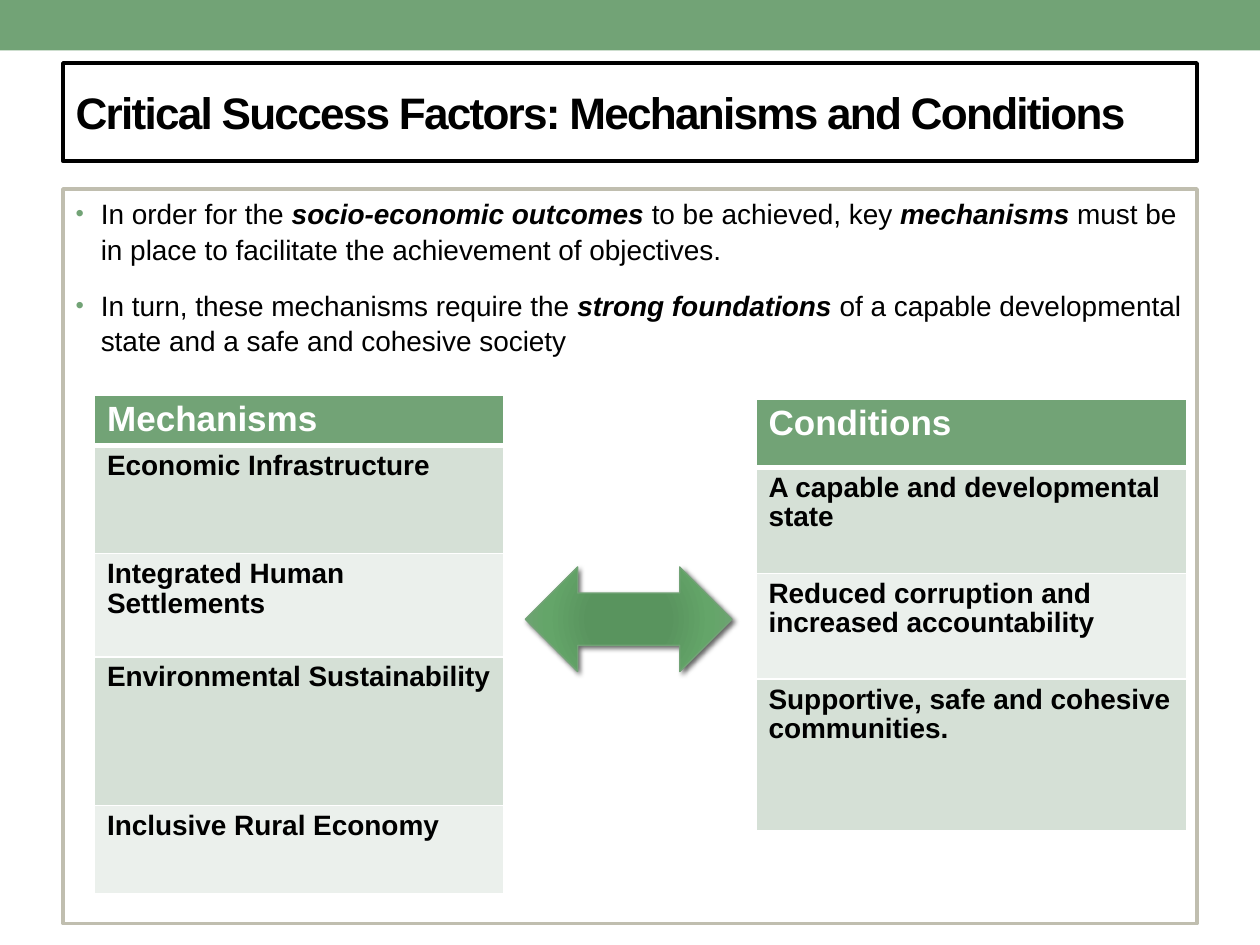
import dataclasses
import typing

import lxml.etree
import pptx
import pptx.dml.color
import pptx.enum.shapes
import pptx.enum.text
import pptx.oxml.ns
import pptx.util

COLUMNS, ROWS = 20, 15
qn = pptx.oxml.ns.qn
Pt = pptx.util.Pt


@dataclasses.dataclass(frozen=True)
class Theme:
    font: str = "Arial"
    ink: str = "000000"
    paper: str = "FFFFFF"
    accent: str = "72A376"
    frame: str = "C0BEAF"
    bands: tuple[str, str] = ("D5E0D6", "EBF0EC")
    arrow_stops: tuple[tuple[int, str], ...] = (
        (0, "57965C"), (34, "59945E"), (70, "64A569"), (100, "72A376"))
    title_size: float = 25.2
    heading_size: float = 20
    text_size: float = 16


class Area(typing.NamedTuple):
    column: float
    row: float
    columns: float
    rows: float


class Factors(typing.NamedTuple):
    column: float
    row: float
    columns: float
    heading: str
    heading_rows: float
    items: tuple[tuple[str, float], ...]


THEME = Theme()
SLIDE_WIDTH = pptx.util.Inches(10)
SLIDE_HEIGHT = pptx.util.Inches(7.5)

TITLE = "Critical Success Factors: Mechanisms and Conditions"
STATEMENTS = (
    (("In order for the ", False), ("socio-economic outcomes ", True),
     ("to be achieved, key ", False), ("mechanisms", True),
     (" must be in place to facilitate the achievement of objectives.", False)),
    (("In turn, these mechanisms require the ", False), ("strong foundations ", True),
     ("of a capable developmental state and a safe and cohesive society", False)),
)
MECHANISMS = Factors(1.5, 6.28, 6.5, "Mechanisms", 0.68, (
    ("Economic Infrastructure", 1.72),
    ("Integrated Human Settlements", 1.64),
    ("Environmental Sustainability", 2.36),
    ("Inclusive Rural Economy", 1.4)))
CONDITIONS = Factors(12, 6.34, 6.84, "Conditions", 1.08, (
    ("A capable and developmental state", 1.68),
    ("Reduced corruption and increased accountability", 1.68),
    ("Supportive, safe and cohesive communities.", 2.4)))


def across(columns: float) -> int:
    return round(SLIDE_WIDTH * columns / COLUMNS)


def down(rows: float) -> int:
    return round(SLIDE_HEIGHT * rows / ROWS)


def bounds(area: Area) -> tuple[int, int, int, int]:
    return across(area.column), down(area.row), across(area.columns), down(area.rows)


def rgb(color: str) -> pptx.dml.color.RGBColor:
    return pptx.dml.color.RGBColor.from_string(color)


def add_node(parent, tag: str, **attributes):
    return lxml.etree.SubElement(
        parent, qn(tag), {key: str(value) for key, value in attributes.items()})


def paint(target, color: str) -> None:
    target.fill.solid()
    target.fill.fore_color.rgb = rgb(color)


def style_run(run, size: float, color: str, bold: bool, italic: bool = False) -> None:
    run.font.name = THEME.font
    run.font.size = Pt(size)
    run.font.color.rgb = rgb(color)
    run.font.bold = bold
    run.font.italic = italic


def frame_placeholder(placeholder, area: Area, border: str) -> None:
    placeholder.left, placeholder.top, placeholder.width, placeholder.height = bounds(area)
    paint(placeholder, THEME.paper)
    placeholder.line.color.rgb = rgb(border)
    placeholder.line.width = Pt(2.08)
    placeholder.text_frame.word_wrap = True
    placeholder.text_frame.auto_size = pptx.enum.text.MSO_AUTO_SIZE.NONE


def fill_title(title) -> None:
    frame_placeholder(title, Area(1, 1, 18, 1.56), THEME.ink)
    title.text_frame.text = TITLE
    title.text_frame.vertical_anchor = pptx.enum.text.MSO_ANCHOR.MIDDLE
    paragraph = title.text_frame.paragraphs[0]
    paragraph.alignment = pptx.enum.text.PP_ALIGN.LEFT
    run = paragraph.runs[0]
    style_run(run, THEME.title_size, THEME.ink, True)
    run.font._element.set("spc", "-100")


def add_bullet(paragraph) -> None:
    properties = paragraph._p.get_or_add_pPr()
    indent = pptx.util.Inches(0.2)
    properties.set("marL", str(indent))
    properties.set("indent", str(-indent))
    add_node(add_node(properties, "a:buClr"), "a:srgbClr", val=THEME.accent)
    add_node(properties, "a:buSzPct", val=85000)
    add_node(properties, "a:buFont", typeface=THEME.font)
    add_node(properties, "a:buChar", char="•")


def fill_statements(body) -> None:
    frame_placeholder(body, Area(1, 3, 18, 11.66), THEME.frame)
    text = body.text_frame
    for index, statement in enumerate(STATEMENTS):
        paragraph = text.add_paragraph() if index else text.paragraphs[0]
        paragraph.space_before = paragraph.space_after = Pt(6)
        paragraph.line_spacing = 1.05
        add_bullet(paragraph)
        for words, stressed in statement:
            run = paragraph.add_run()
            run.text = words
            style_run(run, THEME.text_size, THEME.ink, stressed, stressed)


def add_borders(cell, bottom: float) -> None:
    properties = cell._tc.get_or_add_tcPr()
    for side, width in (("L", 1), ("R", 1), ("T", 1), ("B", bottom)):
        edge = add_node(properties, f"a:ln{side}", w=Pt(width))
        add_node(add_node(edge, "a:solidFill"), "a:srgbClr", val=THEME.paper)


def fill_cell(cell, words: str, size: float, ink: str, fill: str, bottom: float) -> None:
    cell.text_frame.text = words
    paragraph = cell.text_frame.paragraphs[0]
    paragraph.line_spacing = 0.95
    style_run(paragraph.runs[0], size, ink, True)
    add_borders(cell, bottom)
    paint(cell, fill)


def add_factors(slide, factors: Factors) -> None:
    heights = [factors.heading_rows, *(rows for _, rows in factors.items)]
    area = Area(factors.column, factors.row, factors.columns, sum(heights))
    table = slide.shapes.add_table(len(heights), 1, *bounds(area)).table
    for row, rows in zip(table.rows, heights):
        row.height = down(rows)
    fill_cell(table.cell(0, 0), factors.heading, THEME.heading_size,
              THEME.paper, THEME.accent, 3)
    for index, (words, _) in enumerate(factors.items):
        fill_cell(table.cell(index + 1, 0), words, THEME.text_size,
                  THEME.ink, THEME.bands[index % 2], 1)


def add_banner(slide) -> None:
    banner = slide.shapes.add_shape(
        pptx.enum.shapes.MSO_SHAPE.RECTANGLE, *bounds(Area(0, 0, COLUMNS, 0.8)))
    banner.shadow.inherit = False
    paint(banner, THEME.accent)
    banner.line.fill.background()


def add_exchange_arrow(slide) -> None:
    arrow = slide.shapes.add_shape(
        pptx.enum.shapes.MSO_SHAPE.LEFT_RIGHT_ARROW, *bounds(Area(8.34, 9, 3.28, 1.66)))
    arrow.line.color.rgb = rgb(THEME.accent)
    arrow.line.width = Pt(0.75)
    arrow.shadow.inherit = False
    properties = arrow._element.spPr
    gradient = lxml.etree.Element(qn("a:gradFill"), rotWithShape="1")
    stops = add_node(gradient, "a:gsLst")
    for share, color in THEME.arrow_stops:
        add_node(add_node(stops, "a:gs", pos=share * 1000), "a:srgbClr", val=color)
    add_node(add_node(gradient, "a:path", path="circle"), "a:fillToRect",
             l=100000, t=100000, r=100000, b=100000)
    properties.find(qn("a:prstGeom")).addnext(gradient)
    shadow = add_node(properties.find(qn("a:effectLst")), "a:outerShdw",
                      blurRad=Pt(3), dist=Pt(2), dir=45 * 60000, rotWithShape=0)
    add_node(add_node(shadow, "a:srgbClr", val=THEME.ink), "a:alpha", val=60000)


def main() -> None:
    deck = pptx.Presentation()
    deck.slide_width, deck.slide_height = SLIDE_WIDTH, SLIDE_HEIGHT
    slide = deck.slides.add_slide(deck.slide_layouts[1])
    add_banner(slide)
    fill_title(slide.shapes.title)
    fill_statements(slide.placeholders[1])
    add_factors(slide, MECHANISMS)
    add_factors(slide, CONDITIONS)
    add_exchange_arrow(slide)
    deck.save("out.pptx")


if __name__ == "__main__":
    main()
